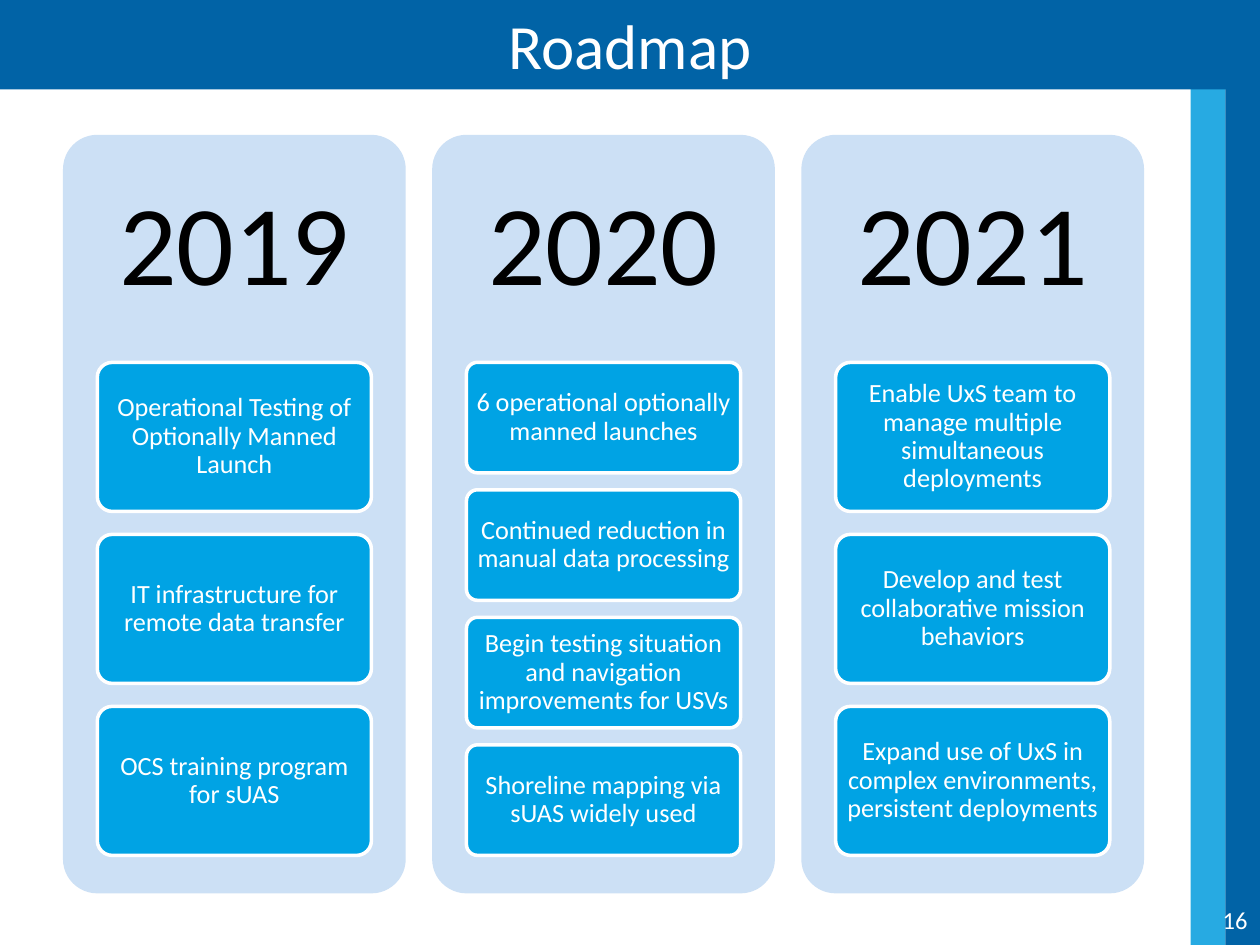
from pptx import Presentation
from pptx.dml.color import RGBColor
from pptx.enum.shapes import MSO_SHAPE
from pptx.enum.text import MSO_ANCHOR, PP_ALIGN
from pptx.util import Inches, Pt

COLORS = {
    "navy": "0163A6",
    "sky": "27AAE2",
    "panel": "CCE0F5",
    "card": "00A3E4",
    "white": "FFFFFF",
    "black": "000000",
}
FONT = "Calibri"
GAP_RATIO = 2 / 13

ROADMAP = {
    "2019": [
        "Operational Testing of Optionally Manned Launch",
        "IT infrastructure for remote data transfer",
        "OCS training program for sUAS",
    ],
    "2020": [
        "6 operational optionally manned launches",
        "Continued reduction in manual data processing",
        "Begin testing situation and navigation improvements for USVs",
        "Shoreline mapping via sUAS widely used",
    ],
    "2021": [
        "Enable UxS team to manage multiple simultaneous deployments",
        "Develop and test collaborative mission behaviors",
        "Expand use of UxS in complex environments, persistent deployments",
    ],
}


def color(name):
    return RGBColor.from_string(COLORS[name])


def inches(*lengths):
    return [Inches(length) for length in lengths]


def write(shape, text, size, ink, align=PP_ALIGN.CENTER, insets=(0.1, 0.05), spacing=None):
    frame = shape.text_frame
    frame.word_wrap = True
    frame.vertical_anchor = MSO_ANCHOR.MIDDLE
    frame.margin_left = frame.margin_right = Inches(insets[0])
    frame.margin_top = frame.margin_bottom = Inches(insets[1])
    frame.text = text
    paragraph = frame.paragraphs[0]
    paragraph.alignment = align
    paragraph.line_spacing = spacing
    paragraph.font.name = FONT
    paragraph.font.size = Pt(size)
    paragraph.font.color.rgb = color(ink)


def add_block(slide, kind, box, fill, outline=None):
    block = slide.shapes.add_shape(kind, *inches(*box))
    block.shadow.inherit = False
    block.fill.solid()
    block.fill.fore_color.rgb = color(fill)
    if outline:
        block.line.color.rgb = color(outline)
        block.line.width = Pt(2)
    else:
        block.line.fill.background()
    if kind == MSO_SHAPE.ROUNDED_RECTANGLE:
        block.adjustments[0] = 0.1
    return block


def add_side_bands(slide, left, top, width, height):
    band_width = width / 2
    for index, fill in enumerate(("sky", "navy")):
        box = (left + index * band_width, top, band_width, height)
        add_block(slide, MSO_SHAPE.RECTANGLE, box, fill)


def add_title(slide, left, top, width, height):
    title = slide.shapes.title
    title.element.getparent().append(title.element)
    title.left, title.top, title.width, title.height = inches(left, top, width, height)
    title.fill.solid()
    title.fill.fore_color.rgb = color("navy")
    write(title, "Roadmap", 36, "white")


def add_year(slide, year, goals, left, top, width, height):
    add_block(slide, MSO_SHAPE.ROUNDED_RECTANGLE, (left, top, width, height), "panel")
    heading_height = 0.3 * height
    heading = slide.shapes.add_textbox(*inches(left, top, width, heading_height))
    write(heading, year, 65, "black", insets=(0.27, 0.27), spacing=0.9)

    count = len(goals)
    card_height = 0.65 * height / (count + (count - 1) * GAP_RATIO)
    pitch = card_height * (1 + GAP_RATIO)
    for row, goal in enumerate(goals):
        box = (left + 0.1 * width, top + heading_height + row * pitch, 0.8 * width, card_height)
        card = add_block(slide, MSO_SHAPE.ROUNDED_RECTANGLE, box, "card", "white")
        write(card, goal, 15, "white", insets=(0.04, 0.03), spacing=0.9)


def add_roadmap(slide, left, top, width, height):
    panel_width = 2.72
    pitch = (width - panel_width) / (len(ROADMAP) - 1)
    for column, (year, goals) in enumerate(ROADMAP.items()):
        add_year(slide, year, goals, left + column * pitch, top, panel_width, height)


def add_page_number(slide, left, top, width, height):
    number = slide.shapes.add_textbox(*inches(left, top, width, height))
    write(number, "16", 14, "white", align=PP_ALIGN.RIGHT)


def main():
    deck = Presentation()
    deck.slide_width, deck.slide_height = inches(10, 7.5)
    slide = deck.slides.add_slide(deck.slide_layouts[5])
    add_side_bands(slide, 9.45, 0, 0.55, 7.5)
    add_title(slide, 0, 0, 10, 0.71)
    add_roadmap(slide, 0.5, 1.07, 8.58, 6.02)
    add_page_number(slide, 9.39, 7.1, 0.61, 0.4)
    deck.save("out.pptx")


if __name__ == "__main__":
    main()
